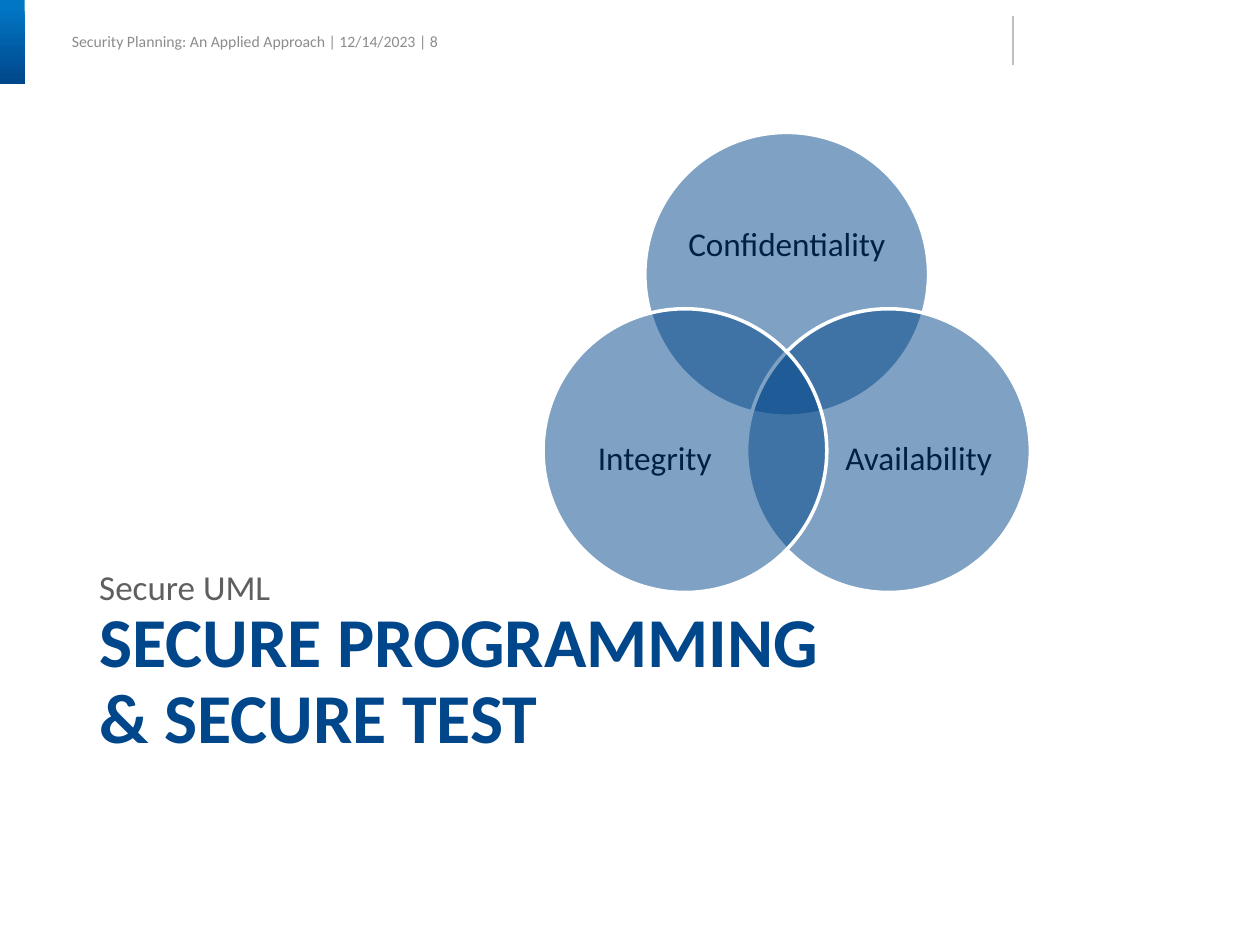
"""Build the section slide on secure programming with a three-circle Venn diagram."""
import math
import pptx
import pptx.util
import pptx.dml.color
import pptx.enum.shapes
import pptx.enum.text
import pptx.oxml.ns
from lxml import etree

Cm, Pt = pptx.util.Cm, pptx.util.Pt
SHAPE = pptx.enum.shapes.MSO_SHAPE
ANCHOR = pptx.enum.text.MSO_ANCHOR
ALIGN = pptx.enum.text.PP_ALIGN
qn = pptx.oxml.ns.qn

HEADER = "Security Planning: An Applied Approach | 12/14/2023 | 8"
TITLE = "SECURE PROGRAMMING\v& SECURE TEST"
TOPIC = "Secure UML"
# label, circle angle, label offset from hub, label size
GOALS = [
    ("Confidentiality", -90, (0, -2.95), (4.19, 2.57)),
    ("Availability", 30, (2.66, 1.37), (3.43, 3.15)),
    ("Integrity", 150, (-2.66, 1.37), (3.43, 3.15)),
]
COLORS = {
    "navy": "00468A", "sky": "0176C3", "ink": "002143", "gray": "5F5F5F",
    "pale": "8C8C8C", "rule": "BFBFBF", "white": "FFFFFF",
}
HUB = (15.86, 7.9)
REACH = 2.37
SIZE = 5.72


def color(name):
    """Return the named colour."""
    return pptx.dml.color.RGBColor.from_string(COLORS[name])


def box(x, y, wide, high):
    """Return a box centred on a point."""
    return [Cm(v) for v in (x - wide / 2, y - high / 2, wide, high)]


def write(shape, text, size, tint, anchor, align=ALIGN.LEFT, space=None, bold=False):
    """Fill a shape with one styled paragraph."""
    frame = shape.text_frame
    frame.word_wrap = True
    frame.auto_size = pptx.enum.text.MSO_AUTO_SIZE.NONE
    frame.vertical_anchor = anchor
    frame.margin_left = frame.margin_right = 0
    frame.margin_top = frame.margin_bottom = 0
    para = frame.paragraphs[0]
    para.text = text
    para.alignment = align
    para.space_before = Pt(0)
    para.line_spacing = space
    font = para.font
    font.name, font.size, font.bold = "Calibri", Pt(size), bold
    font.color.rgb = color(tint)


def place(shape, left, top, wide, high):
    """Move and size a placeholder."""
    shape.left, shape.top = Cm(left), Cm(top)
    shape.width, shape.height = Cm(wide), Cm(high)


def add_head(slide):
    """Add the page header, the corner bar and the thin rule."""
    head = slide.shapes.add_textbox(Cm(1.45), Cm(0.58), Cm(7.8), Cm(0.5))
    write(head, HEADER, 9, "pale", ANCHOR.MIDDLE)
    bar = slide.shapes.add_shape(SHAPE.RECTANGLE, 0, 0, Cm(0.5), Cm(1.7))
    bar.shadow.inherit = False
    bar.line.fill.background()
    bar.fill.gradient()
    bar.fill.gradient_angle = 270
    for stop, spot, tint in zip(bar.fill.gradient_stops, (0.1, 1), ("sky", "navy")):
        stop.position = spot
        stop.color.rgb = color(tint)
    rule = slide.shapes.add_connector(
        pptx.enum.shapes.MSO_CONNECTOR.STRAIGHT, Cm(20.42), Cm(0.33), Cm(20.42), Cm(1.32))
    rule.line.color.rgb = color("rule")
    rule.line.width = Pt(0.75)
    etree.SubElement(rule._element.spPr, qn("a:effectLst"))


def add_venn(slide):
    """Add the three see-through circles and their labels as a group."""
    venn = slide.shapes.add_group_shape().shapes
    for label, angle, shift, size in GOALS:
        turn = math.radians(angle)
        x, y = HUB[0] + REACH * math.cos(turn), HUB[1] + REACH * math.sin(turn)
        disc = venn.add_shape(SHAPE.OVAL, *box(x, y, SIZE, SIZE))
        disc.shadow.inherit = False
        disc.fill.solid()
        disc.fill.fore_color.rgb = color("navy")
        tint = disc._element.spPr.find(".//" + qn("a:srgbClr"))
        etree.SubElement(tint, qn("a:alpha"), val="50000")
        disc.line.color.rgb = color("white")
        disc.line.width = Pt(2)
        text = venn.add_textbox(*box(HUB[0] + shift[0], HUB[1] + shift[1], *size))
        write(text, label, 19, "ink", ANCHOR.MIDDLE, ALIGN.CENTER, 0.9)


def main():
    """Build and save the slide."""
    deck = pptx.Presentation()
    deck.slide_width, deck.slide_height = Cm(25.4), Cm(19.05)
    slide = deck.slides.add_slide(deck.slide_layouts.get_by_name("Section Header"))
    add_head(slide)
    title, body = slide.shapes.title, slide.placeholders[1]
    place(title, 2, 12.24, 21.6, 3.07)
    write(title, TITLE, 40, "navy", ANCHOR.TOP, space=0.9, bold=True)
    place(body, 2, 8.08, 21.6, 4.16)
    write(body, TOPIC, 20, "gray", ANCHOR.BOTTOM, space=Pt(22))
    add_venn(slide)
    deck.save("out.pptx")


if __name__ == "__main__":
    main()
